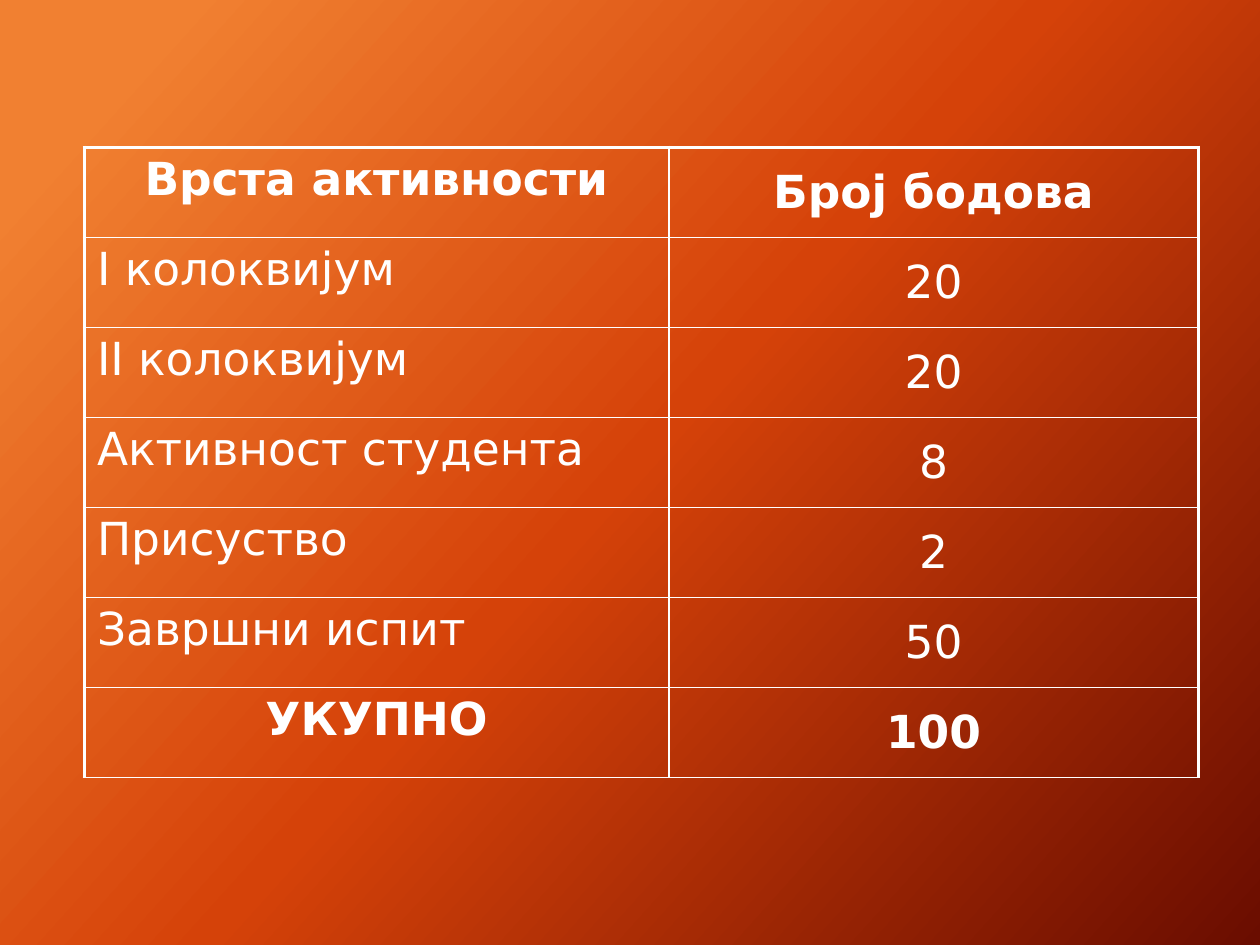
"""Build a slide with a table of course activities and their points."""
from dataclasses import dataclass

from lxml import etree
from pptx import Presentation
from pptx.dml.color import RGBColor
from pptx.enum.text import MSO_ANCHOR, PP_ALIGN
from pptx.oxml.ns import qn
from pptx.util import Inches, Pt

TOP, MIDDLE = MSO_ANCHOR.TOP, MSO_ANCHOR.MIDDLE
LEFT, CENTER = PP_ALIGN.LEFT, PP_ALIGN.CENTER

ROWS = [
    ("Врста активности", "Број бодова"),
    ("I колоквијум", "20"),
    ("II колоквијум", "20"),
    ("Активност студента", "8"),
    ("Присуство", "2"),
    ("Завршни испит", "50"),
    ("УКУПНО", "100"),
]
WIDTHS = (4.64, 4.2)
ROW_HEIGHT = 5 / len(ROWS)


@dataclass(frozen=True)
class Theme:
    font: str = "DejaVu Sans"
    size: int = 26
    ink: str = "FFFFFF"
    thin: float = 1
    thick: float = 2.25
    stops: tuple = ((9, "F18031"), (50, "D54209"), (100, "6A0D00"))
    angle: int = 42


THEME = Theme()


def add_color(parent, color):
    etree.SubElement(parent, qn("a:srgbClr"), val=color)


def paint_back(slide):
    fill = slide.background.fill
    fill.gradient()
    fill.gradient_angle = 360 - THEME.angle
    stops = slide.element.find(".//" + qn("a:gsLst"))
    stops.clear()
    for place, color in THEME.stops:
        stop = etree.SubElement(stops, qn("a:gs"), pos=str(place * 1000))
        add_color(stop, color)


def add_borders(cell, thick):
    props = cell._tc.get_or_add_tcPr()
    for side in "LRTB":
        width = THEME.thick if side in thick else THEME.thin
        line = etree.SubElement(props, qn(f"a:ln{side}"), w=str(Pt(width)))
        add_color(etree.SubElement(line, qn("a:solidFill")), THEME.ink)


def fill_cell(cell, text, row, col):
    strong = row in (0, len(ROWS) - 1)
    add_borders(cell, "LR"[col] + ("T" if row == 0 else ""))
    cell.fill.background()
    cell.vertical_anchor = MIDDLE if col else TOP
    cell.text = text
    para = cell.text_frame.paragraphs[0]
    para.alignment = CENTER if col or strong else LEFT
    font = para.font
    font.name, font.size, font.bold = THEME.font, Pt(THEME.size), strong
    font.color.rgb = RGBColor.from_string(THEME.ink)


def add_grid(slide):
    frame = slide.shapes.add_table(
        len(ROWS), len(WIDTHS), Inches(0.67), Inches(1.17),
        Inches(sum(WIDTHS)), Inches(ROW_HEIGHT * len(ROWS)))
    table = frame.table
    table.first_row = table.horz_banding = False
    for col, width in zip(table.columns, WIDTHS):
        col.width = Inches(width)
    for r, texts in enumerate(ROWS):
        table.rows[r].height = Inches(ROW_HEIGHT)
        for c, text in enumerate(texts):
            fill_cell(table.cell(r, c), text, r, c)


def main():
    deck = Presentation()
    deck.slide_width, deck.slide_height = Inches(10), Inches(7.5)
    slide = deck.slides.add_slide(deck.slide_layouts[6])
    paint_back(slide)
    add_grid(slide)
    deck.save("out.pptx")


if __name__ == "__main__":
    main()
